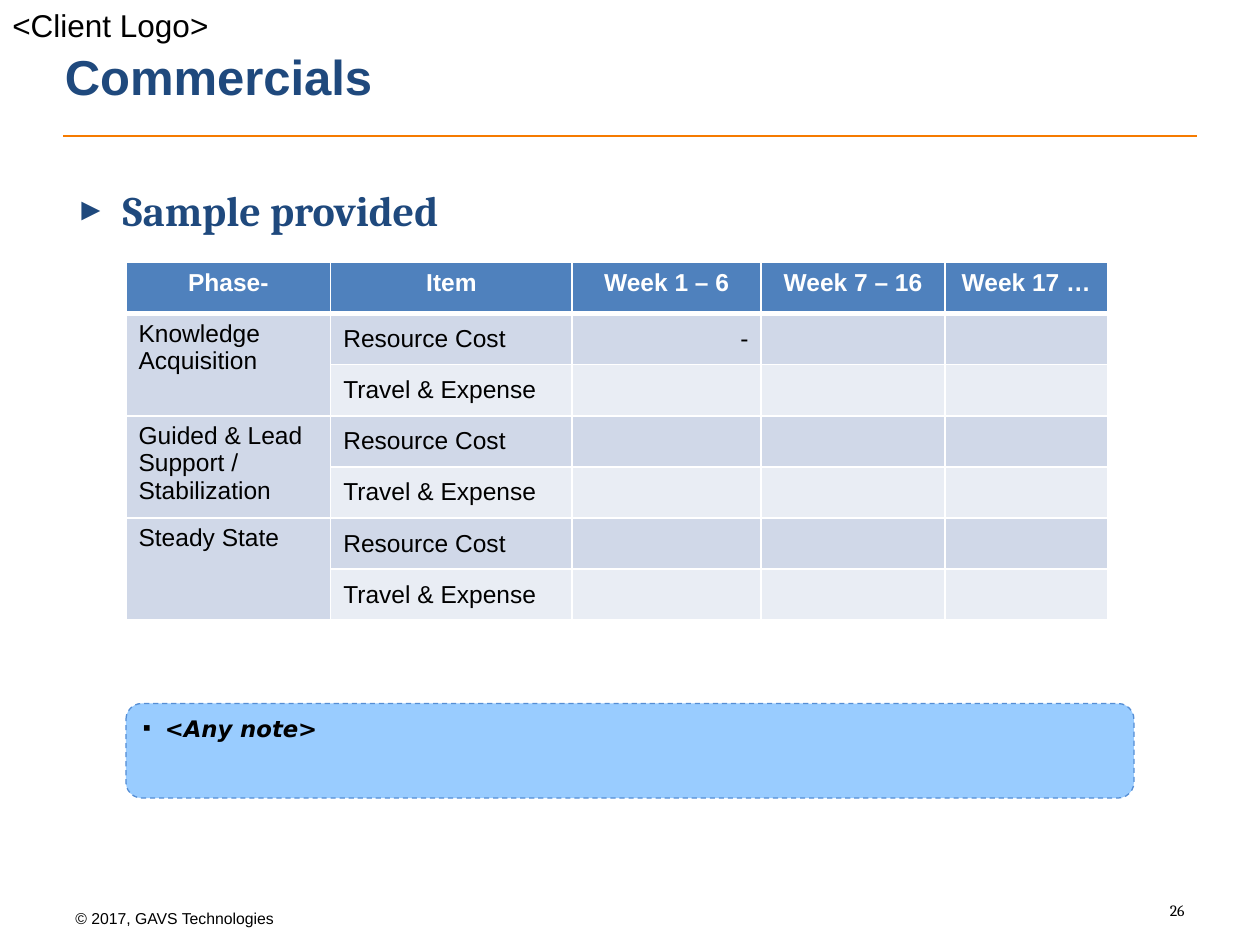
from collections import namedtuple

from lxml.etree import SubElement
from pptx import Presentation
from pptx.dml.color import RGBColor
from pptx.enum.dml import MSO_LINE_DASH_STYLE as Dash
from pptx.enum.shapes import MSO_CONNECTOR as Connector
from pptx.enum.shapes import MSO_SHAPE as Shape
from pptx.enum.text import MSO_ANCHOR as Anchor
from pptx.enum.text import PP_ALIGN as Align
from pptx.oxml.ns import qn
from pptx.util import Pt

Box = namedtuple("Box", "left top width height")

COLORS = {
    "navy": "1F497D",
    "orange": "F67B00",
    "black": "000000",
    "white": "FFFFFF",
    "header": "4F81BD",
    "band_dark": "D0D8E8",
    "band_light": "E9EDF4",
    "note_fill": "99CCFF",
    "note_line": "558ED5",
}
HEADINGS = ["Phase-", "Item", "Week 1 – 6", "Week 7 – 16", "Week 17 …"]
PHASES = ["Knowledge Acquisition", "Guided & Lead Support / Stabilization", "Steady State"]
ITEMS = ["Resource Cost", "Travel & Expense"]
COLUMN_WIDTHS = [117, 138, 108, 105, 93]


def color(name):
    """Return the named colour."""
    return RGBColor.from_string(COLORS[name])


def in_points(box):
    """Convert a box of plain numbers to lengths."""
    return [Pt(value) for value in box]


def style(para, size, tint="black", face="Arial", bold=False, italic=False, align=Align.LEFT):
    """Set the font and alignment of a paragraph."""
    para.alignment = align
    font = para.font
    font.size, font.name, font.bold, font.italic = Pt(size), face, bold, italic
    font.color.rgb = color(tint)


def add_bullet(para, mark, indent, percent=100):
    """Give a paragraph a hanging bullet."""
    props = para._p.get_or_add_pPr()
    props.set("marL", str(Pt(indent)))
    props.set("indent", str(-Pt(indent)))
    SubElement(props, qn("a:buSzPct"), val=str(percent * 1000))
    SubElement(props, qn("a:buFont"), typeface="Arial")
    SubElement(props, qn("a:buChar"), char=mark)


def add_text(page, box, text, size, anchor=Anchor.TOP, bullet=None, **looks):
    """Add a wrapping text box with one paragraph."""
    frame = page.shapes.add_textbox(*in_points(box)).text_frame
    frame.word_wrap = True
    frame.vertical_anchor = anchor
    para = frame.paragraphs[0]
    para.text = text
    if bullet:
        add_bullet(para, *bullet)
    style(para, size, **looks)


def add_header(page, box):
    """Add the client line, the title and the rule below them."""
    add_text(page, Box(box.left, box.top, 180, 29), "<Client Logo>", 18)
    add_text(page, Box(box.left + 30, box.top + 12, 648, 62.6), "Commercials", 28,
             anchor=Anchor.MIDDLE, tint="navy", bold=True)
    bottom = Pt(box.top + box.height)
    rule = page.shapes.add_connector(
        Connector.STRAIGHT, Pt(box.left + 36), bottom, Pt(box.left + box.width - 36), bottom)
    rule.line.color.rgb = color("orange")
    rule.line.width = Pt(0.75)
    SubElement(rule._element.spPr, qn("a:effectLst"))


def add_borders(cell, bottom):
    """Draw white borders around a cell."""
    props = cell._tc.get_or_add_tcPr()
    for side, width in (("L", 1), ("R", 1), ("T", 1), ("B", bottom)):
        line = SubElement(props, qn(f"a:ln{side}"), w=str(Pt(width)))
        fill = SubElement(line, qn("a:solidFill"))
        SubElement(fill, qn("a:srgbClr"), val=COLORS["white"])


def fill_cell(cell, text, fill, anchor=Anchor.TOP, bottom=1, **looks):
    """Set the text, borders and fill of a cell."""
    cell.text = text
    cell.vertical_anchor = anchor
    style(cell.text_frame.paragraphs[0], 14, **looks)
    add_borders(cell, bottom)
    cell.fill.solid()
    cell.fill.fore_color.rgb = color(fill)


def add_cost_table(page, box):
    """Add the table of costs by phase and week."""
    row_count = 1 + len(PHASES) * len(ITEMS)
    table = page.shapes.add_table(row_count, len(HEADINGS), *in_points(box)).table
    table.horz_banding = False
    for column, width in zip(table.columns, COLUMN_WIDTHS):
        column.width = Pt(width)
    for row in table.rows:
        row.height = Pt(box.height / row_count)
    for index, heading in enumerate(HEADINGS):
        fill_cell(table.cell(0, index), heading, "header", bottom=3,
                  tint="white", bold=True, align=Align.CENTER)
    for row in range(1, row_count):
        phase, item = divmod(row - 1, len(ITEMS))
        band = "band_light" if item else "band_dark"
        fill_cell(table.cell(row, 0), "" if item else PHASES[phase], "band_dark")
        fill_cell(table.cell(row, 1), ITEMS[item], band, anchor=Anchor.MIDDLE)
        for column in range(2, len(HEADINGS)):
            value = "-" if (row, column) == (1, 2) else ""
            fill_cell(table.cell(row, column), value, band,
                      anchor=Anchor.MIDDLE, align=Align.RIGHT)
    for row in range(1, row_count, len(ITEMS)):
        table.cell(row, 0).merge(table.cell(row + len(ITEMS) - 1, 0))


def add_note(page, box):
    """Add the dashed note panel."""
    panel = page.shapes.add_shape(Shape.ROUNDED_RECTANGLE, *in_points(box))
    panel.shadow.inherit = False
    panel.fill.solid()
    panel.fill.fore_color.rgb = color("note_fill")
    panel.line.color.rgb = color("note_line")
    panel.line.width = Pt(0.75)
    panel.line.dash_style = Dash.DASH
    frame = panel.text_frame
    frame.word_wrap = True
    frame.vertical_anchor = Anchor.TOP
    para = frame.paragraphs[0]
    para.text = "<Any note>"
    add_bullet(para, "▪", 12.5)
    style(para, 13, face="DejaVu Sans", bold=True, italic=True)


def add_footer(page, box):
    """Add the copyright line and the page number."""
    add_text(page, Box(box.left, box.top + 5, 222, 18), "© 2017, GAVS Technologies", 9)
    add_text(page, Box(box.left + box.width - 168, box.top, 168, 29), "26", 9,
             face="Cambria", align=Align.RIGHT)


def main():
    """Build the slide and save it."""
    deck = Presentation()
    deck.slide_width, deck.slide_height = Pt(720), Pt(540)
    page = deck.slides.add_slide(deck.slide_layouts[6])
    add_header(page, Box(0, 0, 720, 77.8))
    add_text(page, Box(36, 102, 648, 390), "Sample provided", 24,
             bullet=("►", 27, 75), tint="navy", face="Cambria", bold=True)
    add_cost_table(page, Box(72, 150, sum(COLUMN_WIDTHS), 204.4))
    add_note(page, Box(72, 402, 576, 54))
    add_footer(page, Box(36, 511, 648, 29))
    deck.save("out.pptx")


if __name__ == "__main__":
    main()
